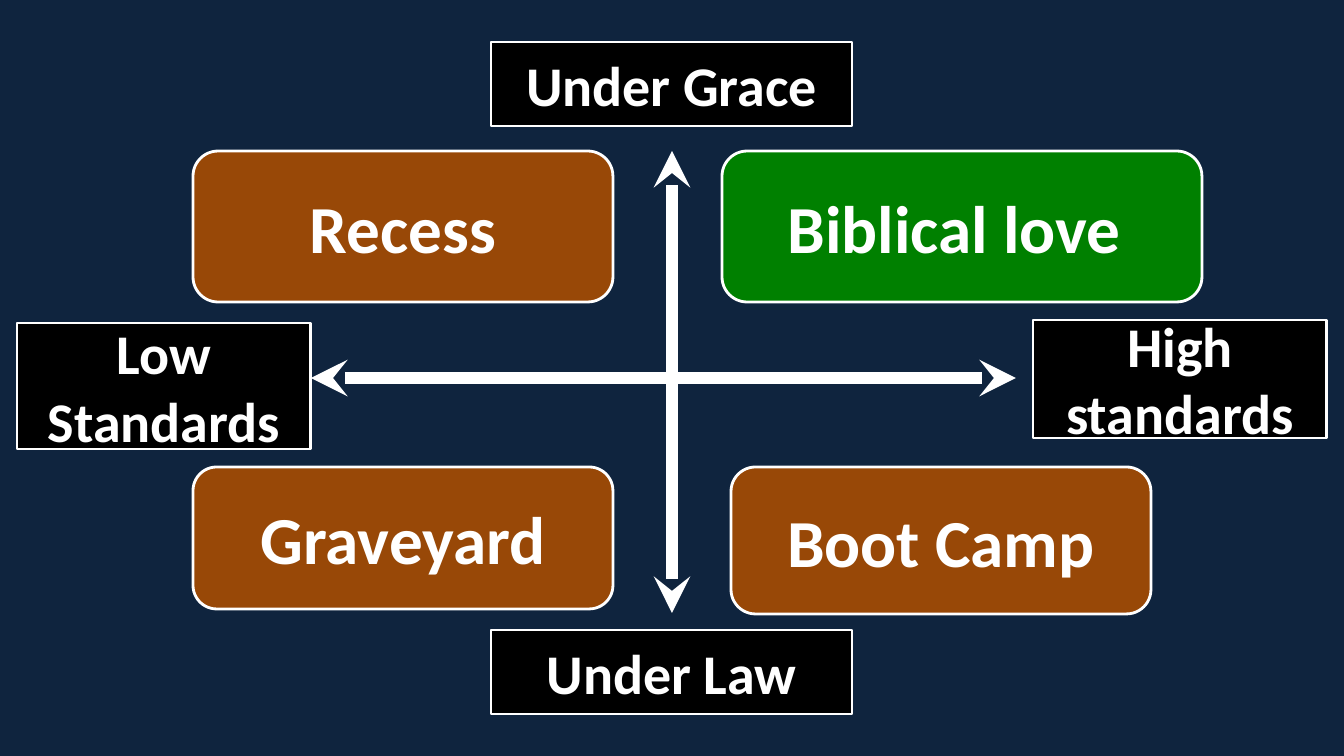
from lxml import etree
from pptx import Presentation
from pptx.dml.color import RGBColor
from pptx.enum.shapes import MSO_CONNECTOR, MSO_SHAPE
from pptx.enum.text import MSO_ANCHOR, PP_ALIGN
from pptx.oxml.ns import qn
from pptx.util import Pt

RECTANGLE = MSO_SHAPE.RECTANGLE
ROUNDED = MSO_SHAPE.ROUNDED_RECTANGLE
STRAIGHT = MSO_CONNECTOR.STRAIGHT
MIDDLE = MSO_ANCHOR.MIDDLE
CENTER = PP_ALIGN.CENTER

NAVY = RGBColor(0x0F, 0x24, 0x3E)
BLACK = RGBColor(0x00, 0x00, 0x00)
WHITE = RGBColor(0xFF, 0xFF, 0xFF)
BROWN = RGBColor(0x98, 0x48, 0x07)
GREEN = RGBColor(0x00, 0x80, 0x00)

FONT = "Calibri"
SLIDE_WIDTH, SLIDE_HEIGHT = 1344, 756
EMU_PER_PX = 12192000 / SLIDE_WIDTH


def px(length):
    return round(length * EMU_PER_PX)


def add_box(slide, kind, box, text, fill, size):
    """Outlined box with centred bold white text."""
    shape = slide.shapes.add_shape(kind, *map(px, box))
    shape.shadow.inherit = False
    shape.fill.solid()
    shape.fill.fore_color.rgb = fill
    shape.line.color.rgb = WHITE
    shape.line.width = Pt(2)
    frame = shape.text_frame
    frame.word_wrap = True
    frame.vertical_anchor = MIDDLE
    frame.text = text
    paragraph = frame.paragraphs[0]
    paragraph.alignment = CENTER
    font = paragraph.runs[0].font
    font.name = FONT
    font.size = Pt(size)
    font.bold = True
    font.color.rgb = WHITE


def add_axis(slide, start, end):
    """Thick white line with an arrowhead at each end."""
    axis = slide.shapes.add_connector(STRAIGHT, *map(px, start + end))
    axis.line.color.rgb = WHITE
    axis.line.width = Pt(8.75)
    line = axis.line._get_or_add_ln()
    for tag in ("a:headEnd", "a:tailEnd"):
        etree.SubElement(line, qn(tag), type="stealth")
    etree.SubElement(axis._element.spPr, qn("a:effectLst"))


def add_axis_labels(slide, box):
    left, top, width, height = box
    label_width, label_height = 361, 84
    label_left = left + (width - label_width) // 2
    side_width = 294
    labels = (
        ("Under Grace", (label_left, top, label_width, label_height)),
        ("Under Law", (label_left, top + height - label_height, label_width, label_height)),
        ("Low Standards", (left, top + 281, side_width, 126)),
        ("High standards", (left + width - side_width, top + 278, side_width, 118)),
    )
    for text, label_box in labels:
        add_box(slide, RECTANGLE, label_box, text, BLACK, 40)


def add_axes(slide, box):
    left, top, width, height = box
    center_x, center_y = SLIDE_WIDTH // 2, SLIDE_HEIGHT // 2
    add_axis(slide, (left, center_y), (left + width, center_y))
    add_axis(slide, (center_x, top), (center_x, top + height))


def add_quadrants(slide, box):
    left, top, width, height = box
    lower_top = top + 316
    quadrants = (
        ("Boot Camp", (left + 538, lower_top, 420, 147), BROWN),
        ("Recess", (left, top, 420, 151), BROWN),
        ("Graveyard", (left, lower_top, 420, 142), BROWN),
        ("Biblical love ", (left + width - 480, top, 480, 151), GREEN),
    )
    for text, quadrant_box, fill in quadrants:
        add_box(slide, ROUNDED, quadrant_box, text, fill, 48)


def add_matrix_slide(presentation):
    slide = presentation.slides.add_slide(presentation.slide_layouts[6])
    slide.background.fill.solid()
    slide.background.fill.fore_color.rgb = NAVY
    add_axis_labels(slide, (17, 42, 1310, 672))
    add_axes(slide, (311, 151, 705, 462))
    add_quadrants(slide, (193, 151, 1009, 463))


def main():
    presentation = Presentation()
    presentation.slide_width = px(SLIDE_WIDTH)
    presentation.slide_height = px(SLIDE_HEIGHT)
    add_matrix_slide(presentation)
    presentation.save("out.pptx")


if __name__ == "__main__":
    main()
